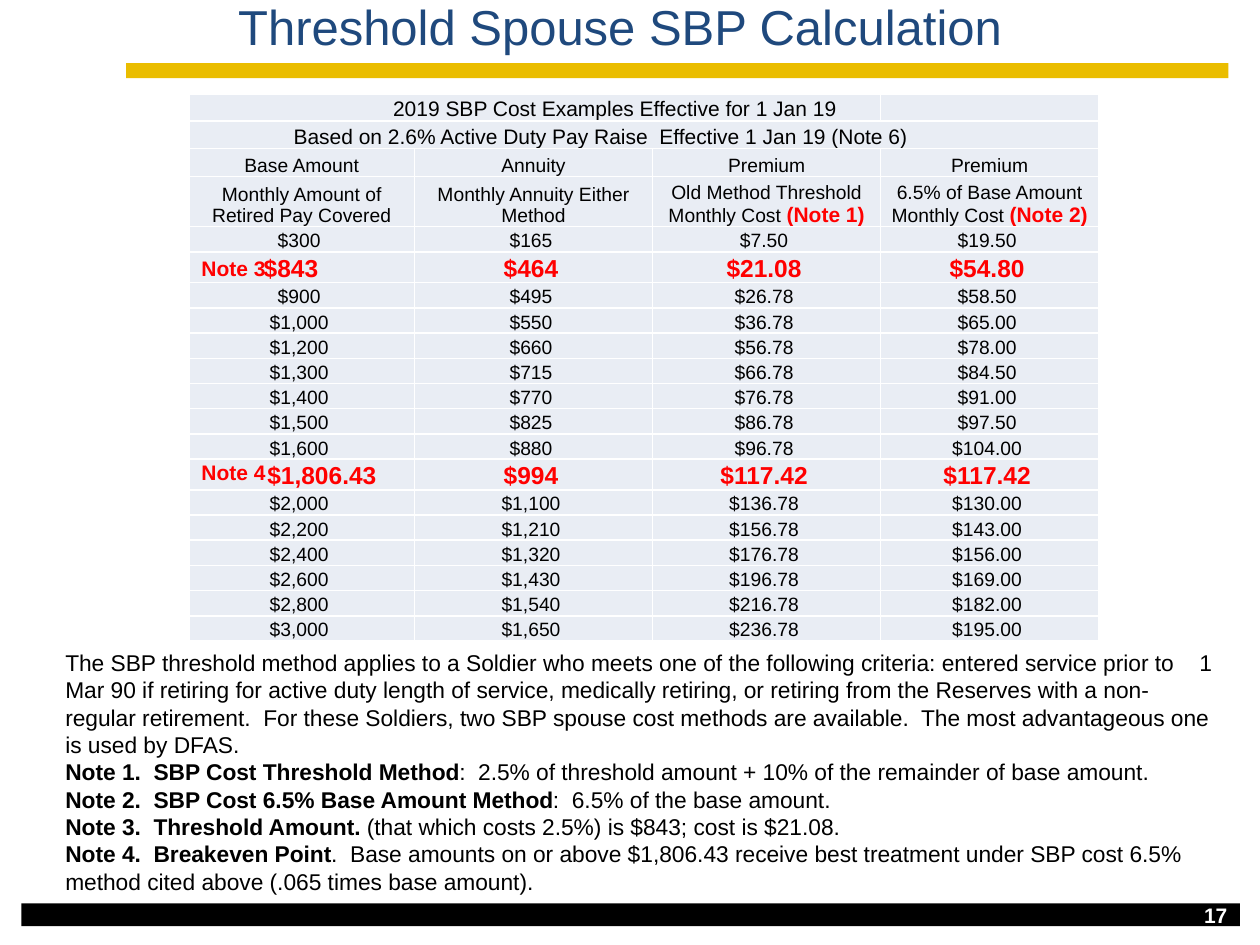
import pptx
import pptx.util
import pptx.dml.color
import pptx.enum.shapes
import pptx.enum.text
from lxml import etree
from pptx.oxml.ns import qn

Inches = pptx.util.Inches
Pt = pptx.util.Pt
ALIGN = pptx.enum.text.PP_ALIGN
ANCHOR = pptx.enum.text.MSO_ANCHOR

COLORS = {
    "gold": "EABD00", "black": "000000", "white": "FFFFFF",
    "navy": "1F497D", "red": "FF0000", "cell": "E9EDF4",
}
FONT = "Arial"
COLUMN_WIDTHS = [1.79, 1.89, 1.81, 1.73]
HEADING_HEIGHTS = [0.21, 0.22, 0.22, 0.4]
COST_HEIGHT, KEY_COST_HEIGHT = 0.2, 0.24
TITLE_ROWS = [
    ("2019 SBP Cost Examples Effective for 1 Jan 19", 3, 1.62),
    ("Based on 2.6% Active Duty Pay Raise  Effective 1 Jan 19 (Note 6)", 4, 0.83),
]
HEADINGS = [
    [("Base Amount", ""), ("Annuity", ""), ("Premium", ""), ("Premium", "")],
    [("Monthly Amount of Retired Pay Covered", ""),
     ("Monthly Annuity Either Method", ""),
     ("Old Method Threshold Monthly Cost ", "(Note 1)"),
     ("6.5% of Base Amount Monthly Cost ", "(Note 2)")],
]
COSTS = [
    ("$300", "$165", "$7.50", "$19.50"),
    ("$843", "$464", "$21.08", "$54.80"),
    ("$900", "$495", "$26.78", "$58.50"),
    ("$1,000", "$550", "$36.78", "$65.00"),
    ("$1,200", "$660", "$56.78", "$78.00"),
    ("$1,300", "$715", "$66.78", "$84.50"),
    ("$1,400", "$770", "$76.78", "$91.00"),
    ("$1,500", "$825", "$86.78", "$97.50"),
    ("$1,600", "$880", "$96.78", "$104.00"),
    ("$1,806.43", "$994", "$117.42", "$117.42"),
    ("$2,000", "$1,100", "$136.78", "$130.00"),
    ("$2,200", "$1,210", "$156.78", "$143.00"),
    ("$2,400", "$1,320", "$176.78", "$156.00"),
    ("$2,600", "$1,430", "$196.78", "$169.00"),
    ("$2,800", "$1,540", "$216.78", "$182.00"),
    ("$3,000", "$1,650", "$236.78", "$195.00"),
]
KEY_AMOUNT_MARGINS = {"$843": (0.01, 0.18), "$1,806.43": (0.37, 0.05)}
CRITERIA = (
    "The SBP threshold method applies to a Soldier who meets one of the following "
    "criteria: entered service prior to\t1 Mar 90 if retiring for active duty length "
    "of service, medically retiring, or retiring from the Reserves with a non-regular "
    "retirement.  For these Soldiers, two SBP spouse cost methods are available.  "
    "The most advantageous one is used by DFAS."
)
NOTES = [
    ("Note 1.  SBP Cost Threshold Method",
     ":  2.5% of threshold amount + 10% of the remainder of base amount."),
    ("Note 2.  SBP Cost 6.5% Base Amount Method", ":  6.5% of the base amount."),
    ("Note 3.  Threshold Amount.", " (that which costs 2.5%) is $843; cost is $21.08."),
    ("Note 4.  Breakeven Point",
     ".  Base amounts on or above $1,806.43 receive best treatment under SBP cost "
     "6.5% method cited above (.065 times base amount)."),
]


def rgb(name):
    return pptx.dml.color.RGBColor.from_string(COLORS[name])


def style(run, size, color="black", bold=False):
    run.font.name = FONT
    run.font.size = Pt(size)
    run.font.bold = bold
    run.font.color.rgb = rgb(color)


def add_bar(slide, box, color):
    bar = slide.shapes.add_shape(pptx.enum.shapes.MSO_SHAPE.RECTANGLE, *map(Inches, box))
    bar.shadow.inherit = False
    bar.fill.solid()
    bar.fill.fore_color.rgb = rgb(color)
    bar.line.fill.background()


def add_text(slide, box, text, size, color, bold=False, align=ALIGN.LEFT,
             anchor=ANCHOR.TOP, wrap=True):
    frame = slide.shapes.add_textbox(*map(Inches, box)).text_frame
    frame.word_wrap = wrap
    frame.vertical_anchor = anchor
    frame.text = text
    frame.paragraphs[0].alignment = align
    style(frame.paragraphs[0].runs[0], size, color, bold)
    return frame


def add_header(slide, box):
    left, top, width, height = box
    add_bar(slide, (1, 0.5, 8.75, 0.12), "gold")
    add_text(slide, (left, top, width, height), "Threshold Spouse SBP Calculation",
             28, "navy", align=ALIGN.CENTER)


def add_footer(slide, box):
    left, top, width, height = box
    add_bar(slide, box, "black")
    add_text(slide, (left + width - 2.33, top - 0.12, 2.33, height + 0.24), "17",
             12, "white", True, ALIGN.RIGHT, ANCHOR.MIDDLE)


def format_cell(cell):
    cell.margin_left = cell.margin_right = cell.margin_top = Inches(0.01)
    cell.margin_bottom = 0
    cell.vertical_anchor = ANCHOR.BOTTOM
    properties = cell._tc.get_or_add_tcPr()
    for side in ("a:lnL", "a:lnR", "a:lnT", "a:lnB"):
        border = etree.SubElement(properties, qn(side), w=str(Pt(1)))
        fill = etree.SubElement(border, qn("a:solidFill"))
        etree.SubElement(fill, qn("a:srgbClr"), val=COLORS["white"])
    cell.fill.solid()
    cell.fill.fore_color.rgb = rgb("cell")
    cell.text_frame.paragraphs[0]._p.get_or_add_endParaRPr().set("sz", "1100")


def fill_cell(cell, text, size, color="black", bold=False, align=ALIGN.CENTER):
    paragraph = cell.text_frame.paragraphs[0]
    paragraph.text = text
    paragraph.alignment = align
    style(paragraph.runs[0], size, color, bold)
    return paragraph


def add_cost_table(slide, box):
    left, top, width, height = box
    row_count = len(HEADING_HEIGHTS) + len(COSTS)
    table = slide.shapes.add_table(row_count, len(COLUMN_WIDTHS),
                                   *map(Inches, box)).table
    table.first_row = table.horz_banding = False
    for column, column_width in zip(table.columns, COLUMN_WIDTHS):
        column.width = Inches(column_width)
    heights = HEADING_HEIGHTS + [
        KEY_COST_HEIGHT if costs[0] in KEY_AMOUNT_MARGINS else COST_HEIGHT
        for costs in COSTS]
    for row, row_height in zip(table.rows, heights):
        row.height = Inches(row_height)
    for cell in table.iter_cells():
        format_cell(cell)

    for r, (title, span, indent) in enumerate(TITLE_ROWS):
        cell = table.cell(r, 0)
        cell.merge(table.cell(r, span - 1))
        cell.margin_left = Inches(indent)
        fill_cell(cell, title, 12, align=ALIGN.LEFT)

    for r, headings in enumerate(HEADINGS, len(TITLE_ROWS)):
        for c, (heading, note) in enumerate(headings):
            paragraph = fill_cell(table.cell(r, c), heading, 11)
            if note:
                note_run = paragraph.add_run()
                note_run.text = note
                style(note_run, 12, "red", True)

    for r, costs in enumerate(COSTS, len(HEADING_HEIGHTS)):
        is_key = costs[0] in KEY_AMOUNT_MARGINS
        look = (14, "red", True) if is_key else (11, "black", False)
        for c, cost in enumerate(costs):
            cell = table.cell(r, c)
            margins = KEY_AMOUNT_MARGINS.get(cost, (0.01, 0.05))
            cell.margin_left, cell.margin_right = map(Inches, margins)
            fill_cell(cell, cost, *look)

    for label, label_top in (("Note 4", 2.85), ("Note 3", 1.23)):
        add_text(slide, (left, top + label_top, 0.72, 0.3), label, 12, "red", True,
                 wrap=False)


def add_notes_text(slide, box):
    frame = add_text(slide, box, CRITERIA, 13, "black")
    tabs = etree.SubElement(frame.paragraphs[0]._p.get_or_add_pPr(), qn("a:tabLst"))
    etree.SubElement(tabs, qn("a:tab"), pos=str(Inches(9)), algn="l")
    for lead, detail in NOTES:
        paragraph = frame.add_paragraph()
        for text, bold in ((lead, True), (detail, False)):
            run = paragraph.add_run()
            run.text = text
            style(run, 13, bold=bold)


def main():
    deck = pptx.Presentation()
    deck.slide_width, deck.slide_height = Inches(10), Inches(7.5)
    slide = deck.slides.add_slide(deck.slide_layouts[6])
    add_footer(slide, (0.17, 7.17, 9.67, 0.18))
    add_header(slide, (0.42, -0.08, 9, 0.8))
    add_cost_table(slide, (1.5, 0.75, 7.22, 4.29))
    add_notes_text(slide, (0.42, 5.1, 9.33, 2.37))
    deck.save("out.pptx")


if __name__ == "__main__":
    main()
